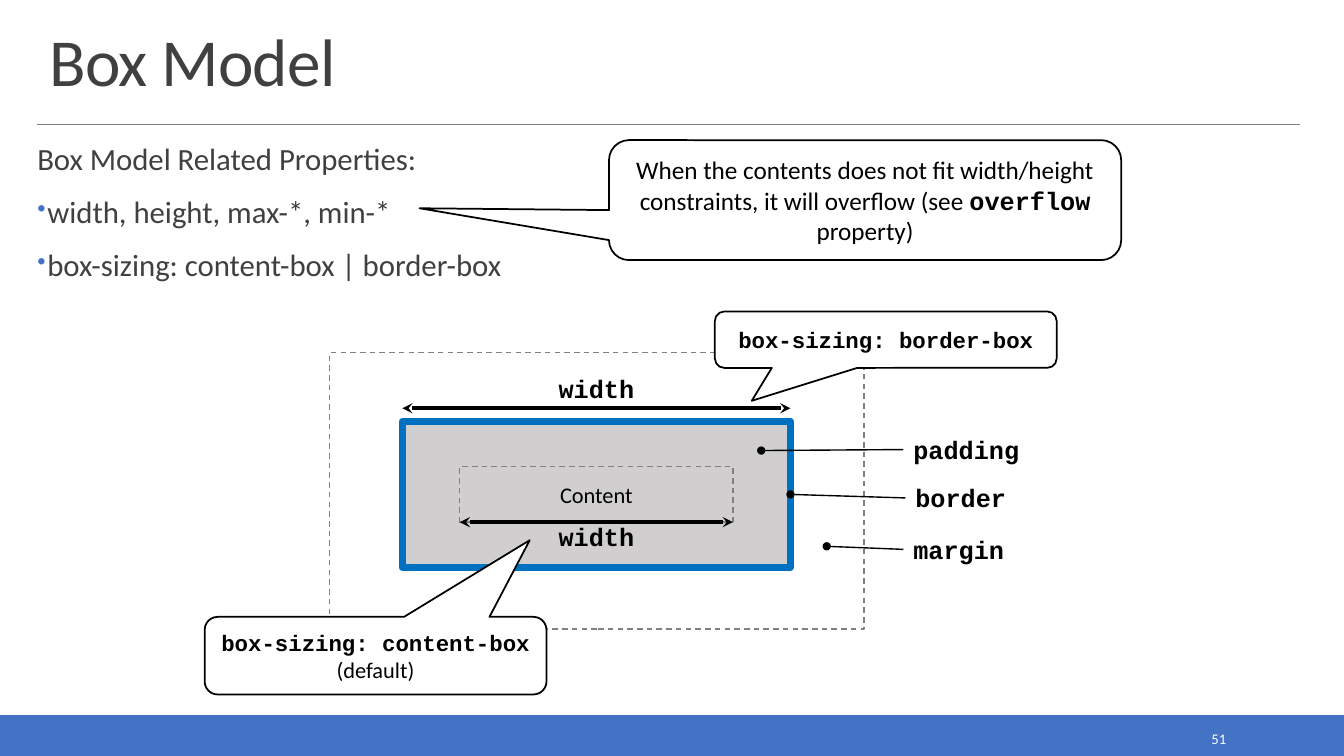
from dataclasses import dataclass

from lxml import etree
from pptx import Presentation
from pptx.dml.color import RGBColor
from pptx.enum.dml import MSO_LINE
from pptx.enum.shapes import MSO_CONNECTOR, MSO_SHAPE
from pptx.enum.text import MSO_ANCHOR, MSO_AUTO_SIZE, PP_ALIGN
from pptx.oxml import parse_xml
from pptx.oxml.ns import nsdecls, qn
from pptx.util import Inches, Pt


@dataclass(frozen=True)
class Theme:
    sans: str = "Calibri"
    mono: str = "Courier New"
    accent: str = "4472C4"
    heading: str = "404040"
    ink: str = "000000"
    paper: str = "FFFFFF"
    rule: str = "808080"
    padding: str = "D0CECE"
    border: str = "0070C0"
    title_size: float = 48
    body_size: float = 22
    label_size: float = 18
    small_size: float = 16
    number_size: float = 10.5


THEME = Theme()


def rgb(color):
    return RGBColor.from_string(color)


def set_font(font, size, color=THEME.ink, name=THEME.sans, bold=False):
    font.name, font.size, font.bold = name, Pt(size), bold
    font.color.rgb = rgb(color)


def add_box(slide, box, fill=None, line=THEME.ink, width=1.25, dashed=False,
            kind=MSO_SHAPE.RECTANGLE):
    shape = slide.shapes.add_shape(kind, *map(Inches, box))
    shape.shadow.inherit = False
    if fill:
        shape.fill.solid()
        shape.fill.fore_color.rgb = rgb(fill)
    else:
        shape.fill.background()
    shape.line.color.rgb = rgb(line)
    shape.line.width = Pt(width)
    if dashed:
        shape.line.dash_style = MSO_LINE.DASH
    shape.text_frame.vertical_anchor = MSO_ANCHOR.MIDDLE
    return shape


def add_line(slide, start, end, color=THEME.ink, width=1.0, head=None, tail=None):
    line = slide.shapes.add_connector(
        MSO_CONNECTOR.STRAIGHT, *map(Inches, (*start, *end)))
    line.line.color.rgb = rgb(color)
    line.line.width = Pt(width)
    outline = line.line._get_or_add_ln()
    for tag, arrow in (("headEnd", head), ("tailEnd", tail)):
        if arrow:
            outline.append(parse_xml(f'<a:{tag} {nsdecls("a")} type="{arrow}"/>'))
    etree.SubElement(line._element.spPr, qn("a:effectLst"))
    return line


def add_text(slide, box, text, size, color=THEME.ink, name=THEME.sans, bold=False,
             align=PP_ALIGN.LEFT, anchor=MSO_ANCHOR.TOP, wrap=True):
    shape = slide.shapes.add_textbox(*map(Inches, box))
    frame = shape.text_frame
    frame.word_wrap = wrap
    frame.vertical_anchor = anchor
    if not wrap:
        frame.auto_size = MSO_AUTO_SIZE.SHAPE_TO_FIT_TEXT
    for index, words in enumerate(text.split("\n")):
        paragraph = frame.add_paragraph() if index else frame.paragraphs[0]
        paragraph.text = words
        paragraph.alignment = align
        set_font(paragraph.font, size, color, name, bold)
    return shape


def add_code(slide, box, text, align=PP_ALIGN.LEFT):
    return add_text(slide, box, text, THEME.label_size, name=THEME.mono, bold=True,
                    align=align, wrap=False)


def add_callout(slide, box, tip, size, paragraphs):
    """Paragraphs are lists of (text, is_code); tip is relative to the box centre."""
    shape = add_box(slide, box, THEME.paper, kind=MSO_SHAPE.ROUNDED_RECTANGULAR_CALLOUT)
    shape.adjustments[0], shape.adjustments[1] = tip
    frame = shape.text_frame
    frame.word_wrap = True
    for index, pieces in enumerate(paragraphs):
        paragraph = frame.add_paragraph() if index else frame.paragraphs[0]
        paragraph.alignment = PP_ALIGN.CENTER
        for text, is_code in pieces:
            run = paragraph.add_run()
            run.text = text
            set_font(run.font, size, name=THEME.mono if is_code else THEME.sans,
                     bold=is_code)


def add_footer(slide, box, number):
    left, top, width, _ = box
    add_box(slide, box, THEME.accent, THEME.accent)
    add_text(slide, (left + width - 2.5, top + 0.09, 1.43, 0.28), number,
             THEME.number_size, THEME.paper, align=PP_ALIGN.RIGHT,
             anchor=MSO_ANCHOR.MIDDLE)


def add_title(slide, box, text):
    left, top, width, height = box
    rule_y = top + height + 0.19
    add_line(slide, (left - 0.02, rule_y), (left + width - 0.02, rule_y),
             THEME.rule, 0.5)
    title = add_text(slide, box, text, THEME.title_size, THEME.heading,
                     anchor=MSO_ANCHOR.BOTTOM)
    paragraph = title.text_frame.paragraphs[0]
    paragraph.line_spacing = 0.85
    paragraph.runs[0]._r.get_or_add_rPr().set("spc", "-50")


def add_properties(slide, box, heading, items):
    body = add_text(slide, box, "\n".join([heading, *items]), THEME.body_size,
                    THEME.heading)
    frame = body.text_frame
    frame.margin_left = frame.margin_right = 0
    frame.margin_top = frame.margin_bottom = Inches(0.04)
    for index, paragraph in enumerate(frame.paragraphs):
        paragraph.line_spacing = 0.9
        paragraph.space_before, paragraph.space_after = Pt(12), Pt(2)
        if index:
            add_bullet(paragraph)


def add_bullet(paragraph):
    properties = paragraph._p.get_or_add_pPr()
    properties.set("marL", str(Inches(0.1)))
    properties.set("indent", str(-Inches(0.1)))
    bullet = (f'<a:buClr {nsdecls("a")}><a:srgbClr val="{THEME.accent}"/></a:buClr>',
              f'<a:buSzPct {nsdecls("a")} val="80000"/>',
              f'<a:buChar {nsdecls("a")} char="•"/>')
    font = properties.find(qn("a:defRPr"))
    for xml in bullet:
        font.addprevious(parse_xml(xml))


def add_box_model(slide, box):
    """Nested margin, border and content boxes with their widths and labels."""
    left, top, width, height = box
    add_box(slide, box, line=THEME.rule, width=1, dashed=True)
    border_box = (left + 0.72, top + 0.68, 3.85, 1.45)
    content_box = (left + 1.29, top + 1.13, 2.71, 0.55)
    border = add_box(slide, border_box, THEME.padding, THEME.border, 5)
    content = add_box(slide, content_box, line=THEME.rule, width=1, dashed=True)
    paragraph = content.text_frame.paragraphs[0]
    paragraph.text = "Content"
    paragraph.alignment = PP_ALIGN.CENTER
    set_font(paragraph.font, THEME.small_size)

    label_x = left + width + 0.39
    for text, x, y, label_width, dot in (
            ("padding", label_x, top + 0.76, 1.26, (left + 4.28, top + 0.97)),
            ("border", label_x + 0.02, top + 1.24, 1.11, None),
            ("margin", label_x, top + 1.75, 1.11, (left + 4.93, top + 1.92))):
        label = add_code(slide, (x, y, label_width, 0.4), text)
        leader = add_line(slide, dot or (x, y), (x, y + 0.2), head="oval")
        if dot is None:
            leader.begin_connect(border, 3)
        leader.end_connect(label, 1)

    for (x, _, span, _), y, text_y in (
            (content_box, top + 1.68, top + 1.62),
            (border_box, top + 0.55, top + 0.15)):
        add_line(slide, (x, y), (x + span, y), width=2.5,
                 head="stealth", tail="stealth")
        add_code(slide, (x + span / 2 - 0.48, text_y, 0.96, 0.4), "width",
                 PP_ALIGN.CENTER)


def add_sizing_callouts(slide, box):
    """Explain both box-sizing values at opposite corners of the box model."""
    left, top, width, height = box
    add_callout(slide, (left - 1.24, top + height - 0.12, 3.39, 0.77),
                (0.451, -1.488), THEME.small_size,
                [[("box-sizing: content-box", True)], [("(default)", False)]])
    add_callout(slide, (left + width - 1.48, top - 0.41, 3.39, 0.56),
                (-0.392, 1.083), THEME.small_size,
                [[("box-sizing: border-box", True)]])


def main():
    presentation = Presentation()
    presentation.slide_width = Inches(13.33)
    presentation.slide_height = Inches(7.5)
    slide = presentation.slides.add_slide(presentation.slide_layouts[6])
    add_footer(slide, (0, 7.1, 13.33, 0.4), "51")
    add_title(slide, (0.39, 0.2, 12.52, 0.84), "Box Model")
    add_properties(slide, (0.37, 1.39, 6.3, 1.65), "Box Model Related Properties:",
                   ["width, height, max-*, min-*", "box-sizing: content-box | border-box"])
    add_callout(slide, (6.04, 1.39, 5.08, 1.19), (-0.87, 0.068), THEME.label_size,
                [[("When the contents does not fit width/height constraints, "
                   "it will overflow (see ", False),
                  ("overflow", True), (" property)", False)]])
    model_box = (3.27, 3.5, 5.3, 2.74)
    add_box_model(slide, model_box)
    add_sizing_callouts(slide, model_box)
    presentation.save("out.pptx")


if __name__ == "__main__":
    main()
